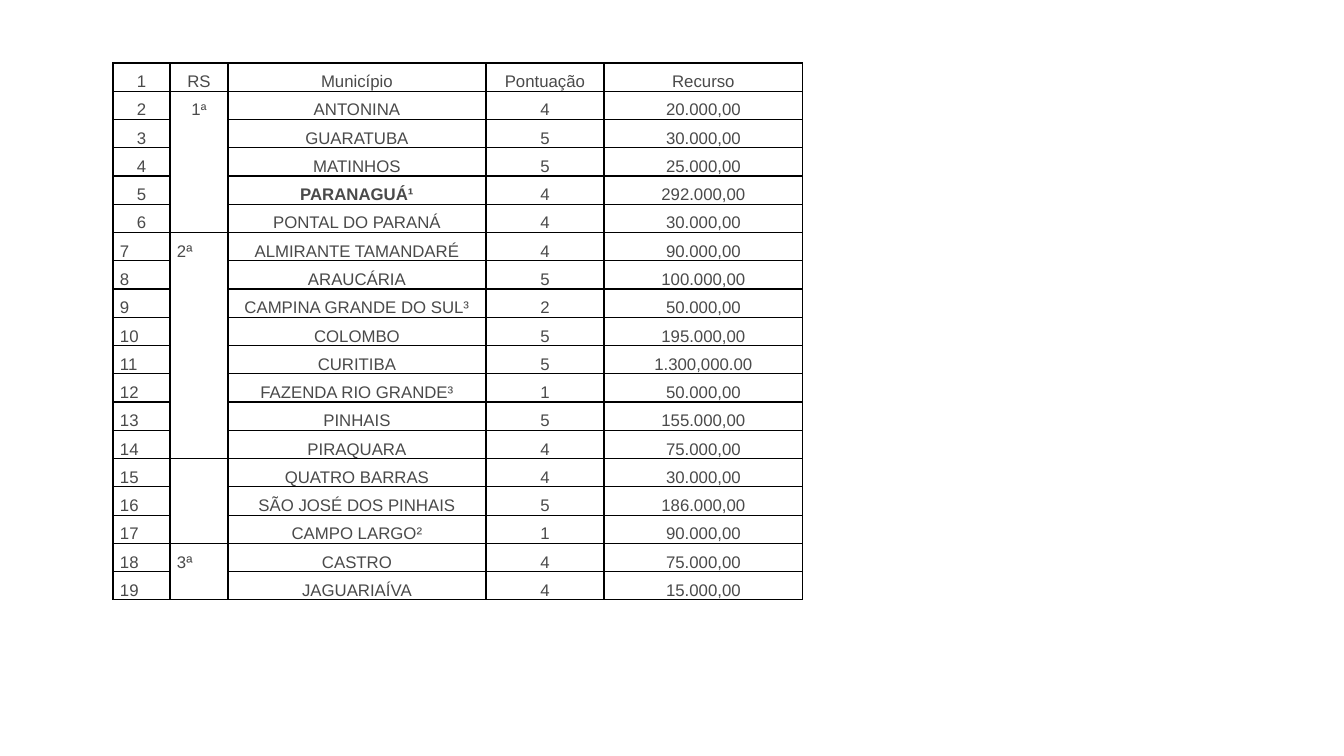
from dataclasses import dataclass

from lxml import etree
from pptx import Presentation
from pptx import util as u
from pptx.dml.color import RGBColor
from pptx.enum import text
from pptx.oxml import ns
from pptx.table import Table, _Cell

SLIDE_WIDTH, SLIDE_HEIGHT = 1344, 756
EMU_PER_PX = 12192000 / SLIDE_WIDTH
COLORS = {"text": "4A4A4A", "border": "000000"}
FONT = "Arial"
BODY_SIZE, ORDINAL_SIZE = 12, 11
LEFT, TOP, ROW_HEIGHT = 113, 63, 28
COLUMN_WIDTHS = (57, 58, 258, 118, 199)
CELL_MARGIN = 7
CENTERED_ROWS = 6
REGION_COLUMN = 1
CENTER, JUSTIFY = text.PP_ALIGN.CENTER, text.PP_ALIGN.JUSTIFY


@dataclass(frozen=True)
class Run:
    words: str
    size: int = BODY_SIZE
    bold: bool = False


@dataclass(frozen=True)
class Municipality:
    name: str
    score: str
    funding: str
    bold: bool = False


@dataclass(frozen=True)
class Region:
    label: tuple[Run, ...]
    members: tuple[Municipality, ...]


HEADER = Region((Run("RS"),), (Municipality("Município", "Pontuação", "Recurso"),))
REGIONS = (
    HEADER,
    Region((Run("1"), Run("ª", ORDINAL_SIZE)), (
        Municipality("ANTONINA", "4", "20.000,00"),
        Municipality("GUARATUBA", "5", "30.000,00"),
        Municipality("MATINHOS", "5", "25.000,00"),
        Municipality("PARANAGUÁ¹", "4", "292.000,00", bold=True),
        Municipality("PONTAL DO PARANÁ", "4", "30.000,00"),
    )),
    Region((Run("2ª"),), (
        Municipality("ALMIRANTE TAMANDARÉ", "4", "90.000,00"),
        Municipality("ARAUCÁRIA", "5", "100.000,00"),
        Municipality("CAMPINA GRANDE DO SUL³", "2", "50.000,00"),
        Municipality("COLOMBO", "5", "195.000,00"),
        Municipality("CURITIBA", "5", "1.300,000.00"),
        Municipality("FAZENDA RIO GRANDE³", "1", "50.000,00"),
        Municipality("PINHAIS", "5", "155.000,00"),
        Municipality("PIRAQUARA", "4", "75.000,00"),
    )),
    Region((), (
        Municipality("QUATRO BARRAS", "4", "30.000,00"),
        Municipality("SÃO JOSÉ DOS PINHAIS", "5", "186.000,00"),
        Municipality("CAMPO LARGO²", "1", "90.000,00"),
    )),
    Region((Run("3ª"),), (
        Municipality("CASTRO", "4", "75.000,00"),
        Municipality("JAGUARIAÍVA", "4", "15.000,00"),
    )),
)


def px(length: int) -> u.Emu:
    return u.Emu(round(length * EMU_PER_PX))


def add_borders(cell: _Cell) -> None:
    properties = cell._tc.get_or_add_tcPr()
    for side in ("lnL", "lnR", "lnT", "lnB"):
        border = etree.SubElement(properties, ns.qn(f"a:{side}"), w=str(u.Pt(1)))
        fill = etree.SubElement(border, ns.qn("a:solidFill"))
        etree.SubElement(fill, ns.qn("a:srgbClr"), val=COLORS["border"])


def fill_cell(cell: _Cell, runs: tuple[Run, ...], alignment: text.PP_ALIGN) -> None:
    add_borders(cell)
    cell.fill.background()
    cell.margin_left = cell.margin_right = px(CELL_MARGIN)
    cell.margin_top = cell.margin_bottom = 0
    paragraph = cell.text_frame.paragraphs[0]
    paragraph.alignment = alignment
    paragraph.line_spacing = 1.5
    paragraph.space_after = u.Pt(10.7)
    for item in runs:
        run = paragraph.add_run()
        run.text = item.words
        run.font.name = FONT
        run.font.size = u.Pt(item.size)
        run.font.bold = item.bold
        run.font.color.rgb = RGBColor.from_string(COLORS["text"])
    if not runs:
        etree.SubElement(paragraph._p, ns.qn("a:endParaRPr"), sz=str(BODY_SIZE * 100))


def fill_region(table: Table, region: Region, first_row: int) -> None:
    for offset, member in enumerate(region.members):
        row = first_row + offset
        alignment = CENTER if row < CENTERED_ROWS else JUSTIFY
        fill_cell(table.cell(row, 0), (Run(str(row + 1)),), alignment)
        label = region.label if offset == 0 else ()
        fill_cell(table.cell(row, REGION_COLUMN), label, alignment)
        details = (Run(member.name, bold=member.bold), Run(member.score), Run(member.funding))
        for column, detail in enumerate(details, start=REGION_COLUMN + 1):
            fill_cell(table.cell(row, column), (detail,), CENTER)
    last_row = first_row + len(region.members) - 1
    if last_row > first_row:
        table.cell(first_row, REGION_COLUMN).merge(table.cell(last_row, REGION_COLUMN))


def main() -> None:
    presentation = Presentation()
    presentation.slide_width, presentation.slide_height = px(SLIDE_WIDTH), px(SLIDE_HEIGHT)
    slide = presentation.slides.add_slide(presentation.slide_layouts[6])
    row_count = sum(len(region.members) for region in REGIONS)
    funding_table = slide.shapes.add_table(
        row_count, len(COLUMN_WIDTHS), px(LEFT), px(TOP),
        px(sum(COLUMN_WIDTHS)), px(row_count * ROW_HEIGHT),
    ).table
    funding_table.first_row = funding_table.horz_banding = False
    for column, width in zip(funding_table.columns, COLUMN_WIDTHS):
        column.width = px(width)
    first_row = 0
    for region in REGIONS:
        fill_region(funding_table, region, first_row)
        first_row += len(region.members)
    presentation.save("out.pptx")


if __name__ == "__main__":
    main()
